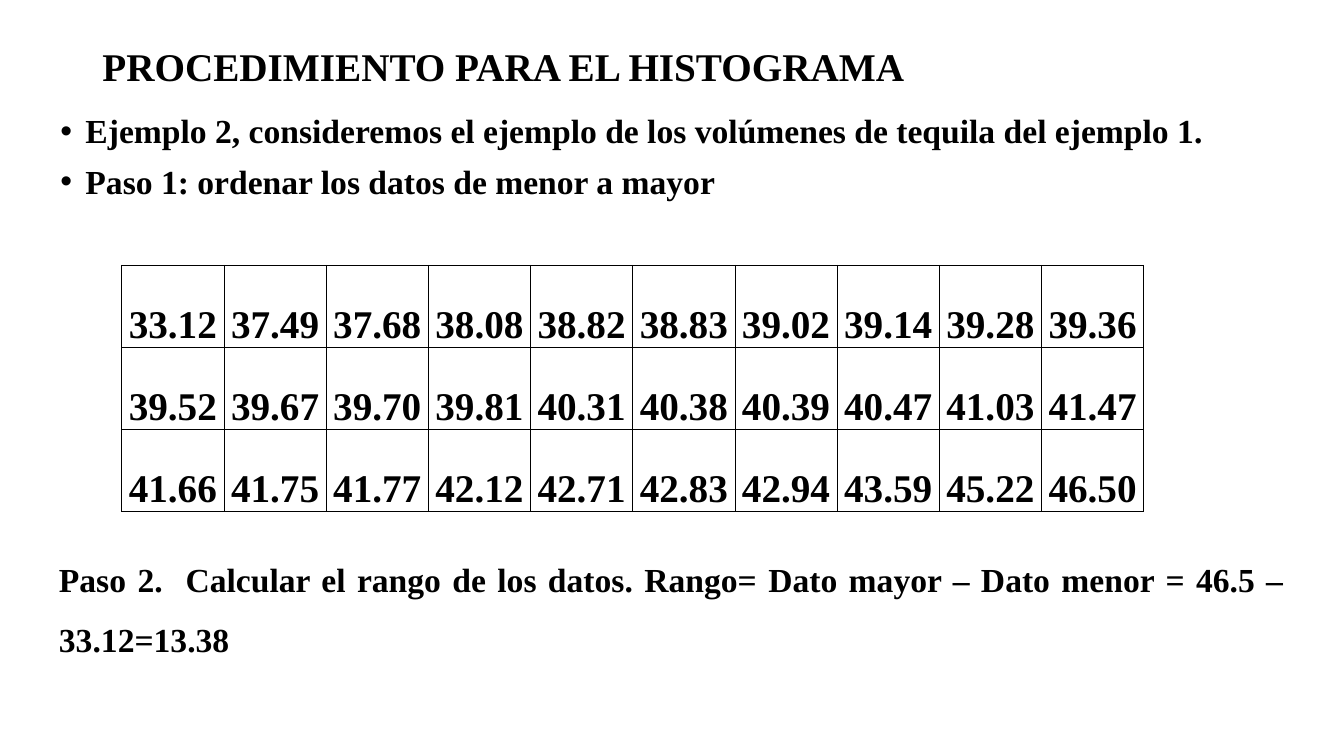
from lxml.etree import SubElement as Sub
from pptx import Presentation
from pptx.dml.color import RGBColor
from pptx.enum.text import MSO_ANCHOR as Anchor, MSO_AUTO_SIZE as Fit, PP_ALIGN as Align
from pptx.oxml import parse_xml
from pptx.oxml.ns import nsdecls, qn
from pptx.util import Pt

TITLE = "PROCEDIMIENTO PARA EL HISTOGRAMA"
STEPS = [
    "Ejemplo 2, consideremos el ejemplo de los volúmenes de tequila del ejemplo 1.",
    "Paso 1: ordenar los datos de menor a mayor",
]
DATA = [
    "33.12 37.49 37.68 38.08 38.82 38.83 39.02 39.14 39.28 39.36".split(),
    "39.52 39.67 39.70 39.81 40.31 40.38 40.39 40.47 41.03 41.47".split(),
    "41.66 41.75 41.77 42.12 42.71 42.83 42.94 43.59 45.22 46.50".split(),
]
RANGE = ("Paso 2.  Calcular el rango de los datos. Rango= Dato mayor – "
         "Dato menor = 46.5 – 33.12=13.38")


def color(code):
    return RGBColor.from_string(code)


class Page:
    """Holds the text style and the current slide, and adds elements to it."""

    face = "Times New Roman"
    ink = "000000"

    def __init__(self, deck):
        self.slide = deck.slides.add_slide(deck.slide_layouts[5])

    def style(self, para, size, align=Align.LEFT):
        font = para.font
        font.name, font.size, font.bold = self.face, Pt(size), True
        font.color.rgb = color(self.ink)
        para.alignment = align

    def title(self, text, left, top, width, height):
        box = self.slide.shapes.title
        box.left, box.top, box.width, box.height = map(Pt, (left, top, width, height))
        frame = box.text_frame
        frame.text = text
        frame.auto_size = Fit.NONE
        frame.vertical_anchor = Anchor.MIDDLE
        para = frame.paragraphs[0]
        self.style(para, 28)
        para.line_spacing = 0.9

    def text(self, lines, left, top, width, height, align=Align.LEFT,
             space=0.9, before=0, after=0, first=0, bullet=False):
        box = self.slide.shapes.add_textbox(*map(Pt, (left, top, width, height)))
        frame = box.text_frame
        frame.word_wrap = True
        frame.text = "\n".join(lines)
        for para in frame.paragraphs:
            self.style(para, 24, align)
            para.line_spacing = space
            para.space_before, para.space_after = Pt(before), Pt(after)
            props = para._p.get_or_add_pPr()
            props.set("marL", str(Pt(18)))
            props.set("indent", str(Pt(first)))
            if bullet:
                Sub(props, qn("a:buFont"), typeface="Arial")
                Sub(props, qn("a:buChar"), char="•")

    def border(self, cell):
        props = cell._tc.get_or_add_tcPr()
        for spot, side in enumerate("LRTB"):
            props.insert(spot, parse_xml(
                f'<a:ln{side} {nsdecls("a")} w="{Pt(0.5)}"><a:solidFill>'
                f'<a:srgbClr val="{self.ink}"/></a:solidFill></a:ln{side}>'))

    def table(self, data, left, top, wide, high):
        rows, cols = len(data), len(data[0])
        spots = map(Pt, (left, top, wide * cols, high * rows))
        grid = self.slide.shapes.add_table(rows, cols, *spots).table
        grid.first_row = grid.horz_banding = False
        for cell, value in zip(grid.iter_cells(), sum(data, [])):
            cell.text = value
            cell.fill.background()
            cell.vertical_anchor = Anchor.BOTTOM
            cell.margin_left = cell.margin_right = cell.margin_top = Pt(0.7)
            cell.margin_bottom = 0
            self.style(cell.text_frame.paragraphs[0], 28, Align.CENTER)
            self.border(cell)


def main():
    deck = Presentation()
    deck.slide_width, deck.slide_height = Pt(960), Pt(540)
    page = Page(deck)
    page.title(TITLE, 66, 29, 828, 41)
    page.text(STEPS, 36, 78.5, 858, 396.5, before=10, first=-18, bullet=True)
    page.table(DATA, 87, 189.5, 73, 58.5)
    page.text([RANGE], 17, 381, 907, 89, Align.JUSTIFY, space=1.5, after=6)
    deck.save("out.pptx")


if __name__ == "__main__":
    main()
